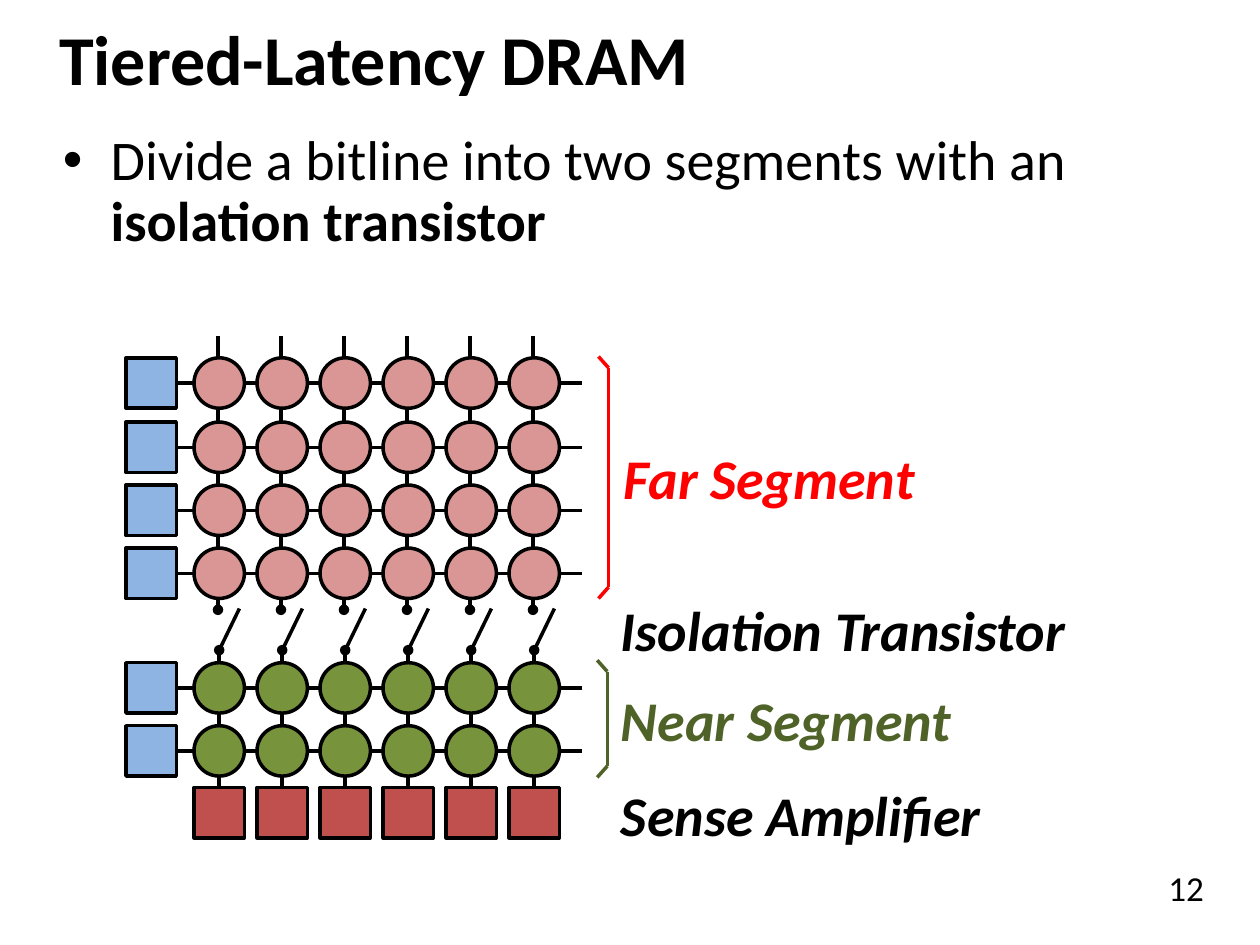
from lxml import etree
from pptx import Presentation
from pptx.dml.color import RGBColor
from pptx.enum.shapes import MSO_CONNECTOR, MSO_SHAPE
from pptx.enum.text import MSO_ANCHOR, PP_ALIGN
from pptx.oxml.ns import qn
from pptx.util import Inches, Pt

STRAIGHT = MSO_CONNECTOR.STRAIGHT
RECT, OVAL = MSO_SHAPE.RECTANGLE, MSO_SHAPE.OVAL
TOP, MIDDLE = MSO_ANCHOR.TOP, MSO_ANCHOR.MIDDLE
LEFT, CENTER = PP_ALIGN.LEFT, PP_ALIGN.CENTER

BLACK = RGBColor(0x00, 0x00, 0x00)
RED = RGBColor(0xFF, 0x00, 0x00)
DARK_GREEN = RGBColor(0x4F, 0x62, 0x28)
ROW_BLUE = RGBColor(0x8E, 0xB4, 0xE3)
FAR_PINK = RGBColor(0xD9, 0x96, 0x94)
NEAR_GREEN = RGBColor(0x77, 0x93, 0x3C)
AMP_RED = RGBColor(0xC0, 0x50, 0x4D)

FONT = "Calibri"
SIZE = 0.4          # side of every cell, row driver and amplifier
PITCH = 0.5         # distance between bitlines
BITLINES = [1.74 + PITCH * i for i in range(6)]
FAR_ROWS = [3.04, 3.55, 4.05, 4.55]
NEAR_ROWS = [5.46, 5.96]
AMP_Y = 6.45


def add_line(slide, x1, y1, x2, y2, color=BLACK, dot=False):
    """Straight line, with an optional round dot at its start."""
    ln = slide.shapes.add_connector(
        STRAIGHT, Inches(x1), Inches(y1), Inches(x2), Inches(y2))
    ln.line.color.rgb = color
    ln.line.width = Pt(2)
    if dot:
        etree.SubElement(ln.line._get_or_add_ln(), qn("a:headEnd"), type="oval")
    etree.SubElement(ln._element.spPr, qn("a:effectLst"))


def add_block(slide, kind, cx, cy, fill):
    """Outlined square or circle, placed by its centre."""
    sp = slide.shapes.add_shape(
        kind, Inches(cx - SIZE / 2), Inches(cy - SIZE / 2),
        Inches(SIZE), Inches(SIZE))
    sp.shadow.inherit = False
    sp.fill.solid()
    sp.fill.fore_color.rgb = fill
    sp.line.color.rgb = BLACK
    sp.line.width = Pt(2)


def add_text(slide, box, runs, size, color=BLACK, italic=False,
             align=LEFT, anchor=MIDDLE):
    """Text box with one paragraph; runs are (text, bold) pairs."""
    tb = slide.shapes.add_textbox(*[Inches(v) for v in box])
    tf = tb.text_frame
    tf.word_wrap = True
    tf.vertical_anchor = anchor
    p = tf.paragraphs[0]
    p.alignment = align
    for text, bold in runs:
        r = p.add_run()
        r.text = text
        r.font.name = FONT
        r.font.size = Pt(size)
        r.font.color.rgb = color
        r.font.bold = bold
        r.font.italic = italic
    return tf


def add_bullet(p, indent):
    pPr = p._p.get_or_add_pPr()
    pPr.set("marL", str(Inches(indent)))
    pPr.set("indent", str(-Inches(indent)))
    etree.SubElement(pPr, qn("a:buFont"), typeface="Arial")
    etree.SubElement(pPr, qn("a:buChar"), char="•")


def add_bracket(slide, x, top, bottom, color):
    """Right-hand bracket with slanted ends."""
    dx, dy = 0.08, 0.09
    add_line(slide, x, top + dy, x, bottom - dy, color)
    add_line(slide, x, top + dy, x - dx, top, color)
    add_line(slide, x - dx, bottom, x, bottom - dy, color)


def add_row(slide, y, fill):
    """Wordline with its row driver and cells."""
    add_line(slide, 4.62, y, 1.4, y)
    add_block(slide, RECT, 1.2, y, ROW_BLUE)
    for x in BITLINES:
        add_block(slide, OVAL, x, y, fill)


def add_array(slide):
    # Bitlines, isolation switches and sense amplifiers
    for x in BITLINES:
        add_line(slide, x - 0.01, 4.84, x - 0.01, 2.67, dot=True)
        add_line(slide, x, 6.25, x, 5.17)
        add_line(slide, x, 5.16, x + 0.16, 4.83, dot=True)
        add_block(slide, RECT, x, AMP_Y, AMP_RED)
    # Rows of cells
    for rows, fill in ((FAR_ROWS, FAR_PINK), (NEAR_ROWS, NEAR_GREEN)):
        for y in rows:
            add_row(slide, y, fill)


def main():
    prs = Presentation()
    prs.slide_width, prs.slide_height = Inches(10), Inches(7.5)
    slide = prs.slides.add_slide(prs.slide_layouts[6])

    # Title, bullet and page number
    tf = add_text(slide, (0, 0, 10, 0.92), [("Tiered-Latency DRAM", True)], 40)
    tf.margin_left = Inches(0.47)
    tf = add_text(slide, (0.4, 1, 9.42, 1.5),
                  [("Divide a bitline into two segments with an ", False),
                   ("isolation transistor", True)], 32, anchor=TOP)
    p = tf.paragraphs[0]
    p.line_spacing = 0.9
    add_bullet(p, 0.38)
    add_text(slide, (8.83, 6.83, 1.17, 0.67), [("12", False)], 20,
             align=CENTER, anchor=TOP)

    # Memory array with segment brackets
    add_array(slide)
    add_bracket(slide, 4.83, 2.83, 4.75, RED)
    add_bracket(slide, 4.82, 5.24, 6.17, DARK_GREEN)

    # Labels
    for text, box, color in (
            ("Far Segment", (4.85, 3.58, 3.2, 0.42), RED),
            ("Isolation Transistor", (4.83, 4.75, 4.5, 0.49), BLACK),
            ("Near Segment", (4.83, 5.5, 3.2, 0.42), DARK_GREEN),
            ("Sense Amplifier", (4.83, 6.25, 3.91, 0.42), BLACK)):
        add_text(slide, box, [(text, True)], 32, color, italic=True)

    prs.save("out.pptx")


if __name__ == "__main__":
    main()
